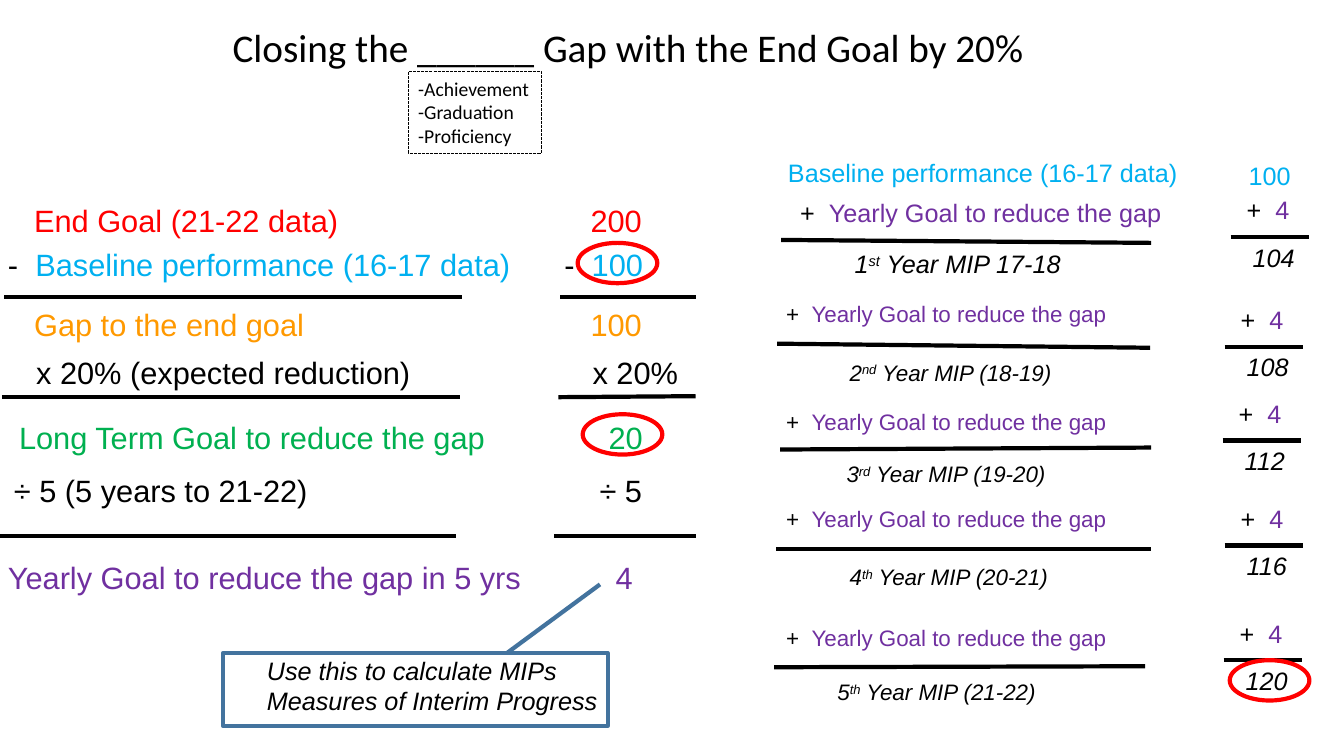
"""Build the slide on closing a gap with the end goal by 20%."""
from lxml.etree import SubElement
from pptx import Presentation
from pptx.dml.color import RGBColor
from pptx.enum.dml import MSO_LINE
from pptx.enum.shapes import MSO_CONNECTOR, MSO_SHAPE
from pptx.enum.text import MSO_ANCHOR
from pptx.oxml.ns import qn
from pptx.util import Pt

INK = {
    "black": "000000", "red": "FF0000", "blue": "00B0F0", "orange": "FF9900",
    "green": "00B050", "purple": "7030A0", "steel": "43739E",
}
TITLE = "Closing the ______ Gap with the End Goal by 20%"
KINDS = ["-Achievement", "-Graduation", "-Proficiency"]
NOTE = ["Use this to calculate MIPs", "Measures of Interim Progress"]
BASE = "Baseline performance (16-17 data)"
YEARLY = "Yearly Goal to reduce the gap"

# sign, colour, top, (label, left, width), (value, left, width)
STEPS = [
    ("", "red", 140.4, ("End Goal (21-22 data)", 17.3, 253), ("200", 414.7, 63)),
    ("-", "blue", 172.1, (BASE, -1.4, 377), ("100", 396, 81)),
    ("", "orange", 214.6, ("Gap to the end goal", 17.3, 243), ("100", 414.7, 82)),
    ("", "black", 249.1, ("x 20% (expected reduction)", 18.7, 309), ("x 20%", 416.2, 88)),
    ("", "green", 295.2, ("Long Term Goal to reduce the gap", 6.5, 361), ("20", 427.7, 76)),
    ("", "black", 333.4, ("÷ 5 (5 years to 21-22)", 2.9, 247), ("÷ 5", 421.2, 53)),
    ("", "purple", 395.3, ("Yearly Goal to reduce the gap in 5 yrs", -1.4, 418), ("4", 432.7, 56)),
]
# left, value left, top, value end top
RULES = [(2.9, 400.3, 212.4, 212.4), (1.4, 398.9, 283.7, 283), (-1.4, 396, 383, 383)]

# number, suffix, period, size, label at, rule ends, MIP at, addend at
YEARS = [
    ("1", "st", "17-18", 18, (564.5, 137.5), (558, 171.4, 822.2, 173.5), (603.4, 174.2), (883.4, 135.4)),
    ("2", "nd", "(18-19)", 16, (554.4, 211), (555.1, 245.5, 821.5, 248.4), (599.8, 252.7), (879.1, 213.8)),
    ("3", "rd", "(19-20)", 16, (554.4, 288), (557.3, 321.1, 822.2, 319.7), (597.6, 325.4), (877.7, 280.8)),
    ("4", "th", "(20-21)", 16, (554.4, 357.1), (554.4, 392.4, 822.2, 392.4), (599.8, 398.9), (879.1, 355.7)),
    ("5", "th", "(21-22)", 16, (554.4, 442.1), (553, 476.6, 817.9, 475.9), (591.1, 481), (878.4, 437.8)),
]
START, GAIN = 100, 4
RINGS = [(878.4, 471.6), (412.6, 173.5), (416.2, 295.9)]
TABS = {22: 19.6, 18: 20.5, 16: 18.2}

deck = Presentation()
deck.slide_width, deck.slide_height = Pt(960), Pt(540)
slide = deck.slides.add_slide(deck.slide_layouts[6])
shapes = slide.shapes


def tint(text, size, tone="black", face="Arial", slant=False):
    for para in text.paragraphs:
        for run in para.runs:
            font = run.font
            font.size, font.name, font.italic = Pt(size), face, slant
            font.color.rgb = RGBColor.from_string(INK[tone])


def write(words, left, top, width, size, tone="black", face="Arial", slant=False):
    lines = len(words.split("\n"))
    box = shapes.add_textbox(Pt(left), Pt(top), Pt(width), Pt(lines * size * 1.2 + 7.2))
    text = box.text_frame
    text.word_wrap = True
    text.text = words
    tint(text, size, tone, face, slant)
    return text.paragraphs[0]


def signed(sign, words, left, top, width, size, tone):
    para = write(sign, left, top, width, size)
    stops = SubElement(para._p.get_or_add_pPr(), qn("a:tabLst"))
    SubElement(stops, qn("a:tab"), pos=str(Pt(TABS[size])), algn="l")
    run = para.add_run()
    run.text = "\t" + words
    run.font.size, run.font.name = Pt(size), "Arial"
    run.font.color.rgb = RGBColor.from_string(INK[tone])


def rule(left, top, right, end):
    line = shapes.add_connector(MSO_CONNECTOR.STRAIGHT, Pt(left), Pt(top), Pt(right), Pt(end))
    line.line.width = Pt(3)
    line.line.color.rgb = RGBColor.from_string(INK["black"])
    SubElement(line._element.spPr, qn("a:effectLst"))


def frame(kind, left, top, width, height, tone, weight):
    shape = shapes.add_shape(kind, Pt(left), Pt(top), Pt(width), Pt(height))
    shape.shadow.inherit = False
    shape.fill.background()
    shape.line.width = Pt(weight)
    shape.line.color.rgb = RGBColor.from_string(INK[tone])
    return shape


def year_name(number, suffix, period, left, top, size):
    para = write(number, left, top, 183, size, slant=True)
    for words, base in ((suffix, "30000"), (f" Year MIP {period}", "0")):
        run = para.add_run()
        run.text = words
        run._r.get_or_add_rPr().set("baseline", base)
    tint(para._parent, size, slant=True)


write(TITLE, 159.1, 13, 620, 28, face="Calibri")
menu = frame(MSO_SHAPE.RECTANGLE, 291.6, 51.1, 95, 58.3, "black", 0.75)
menu.line.dash_style = MSO_LINE.SQUARE_DOT
text = menu.text_frame
text.word_wrap = True
text.vertical_anchor = MSO_ANCHOR.TOP
text.text = "\n".join(KINDS)
tint(text, 14, face="Calibri")
for para in text.paragraphs:
    para.alignment = 1

for sign, tone, top, *cells in STEPS:
    for words, left, width in cells:
        if sign:
            signed(sign, words, left, top, width, 22, tone)
        else:
            write(words, left, top, width, 22, tone)
for left, start, top, end in RULES:
    rule(left, top, left + 326.9, top)
    rule(start, top, 496.8, end)

write(BASE, 555.8, 108.7, 330, 18, "blue")
write(str(START), 884.8, 110.9, 56, 18, "blue")
for index, (number, suffix, period, size, label, ends, name, plus) in enumerate(YEARS, 1):
    signed("+", YEARLY, *label, 275, size, "purple")
    rule(*ends)
    year_name(number, suffix, period, *name, size)
    left, top = plus
    signed("+", str(GAIN), left, top, 47.5, 18, "purple")
    rule(left - 4.3, top + 33.9, left + 51.8, top + 33.9)
    write(str(START + index * GAIN), left + 4.3, top + 33.8, 54, 18, slant=True)

write("\n".join(NOTE), 183.6, 464.4, 250.6, 18, slant=True)
call = frame(MSO_SHAPE.LINE_CALLOUT_1, 159.1, 466.6, 275, 51.8, "steel", 3)
for index, value in enumerate((-0.01, 0.74, -0.95, 0.98)):
    call.adjustments[index] = value
for left, top in RINGS:
    frame(MSO_SHAPE.OVAL, left, top, 56.9, 28.8, "red", 3)

deck.save("out.pptx")
